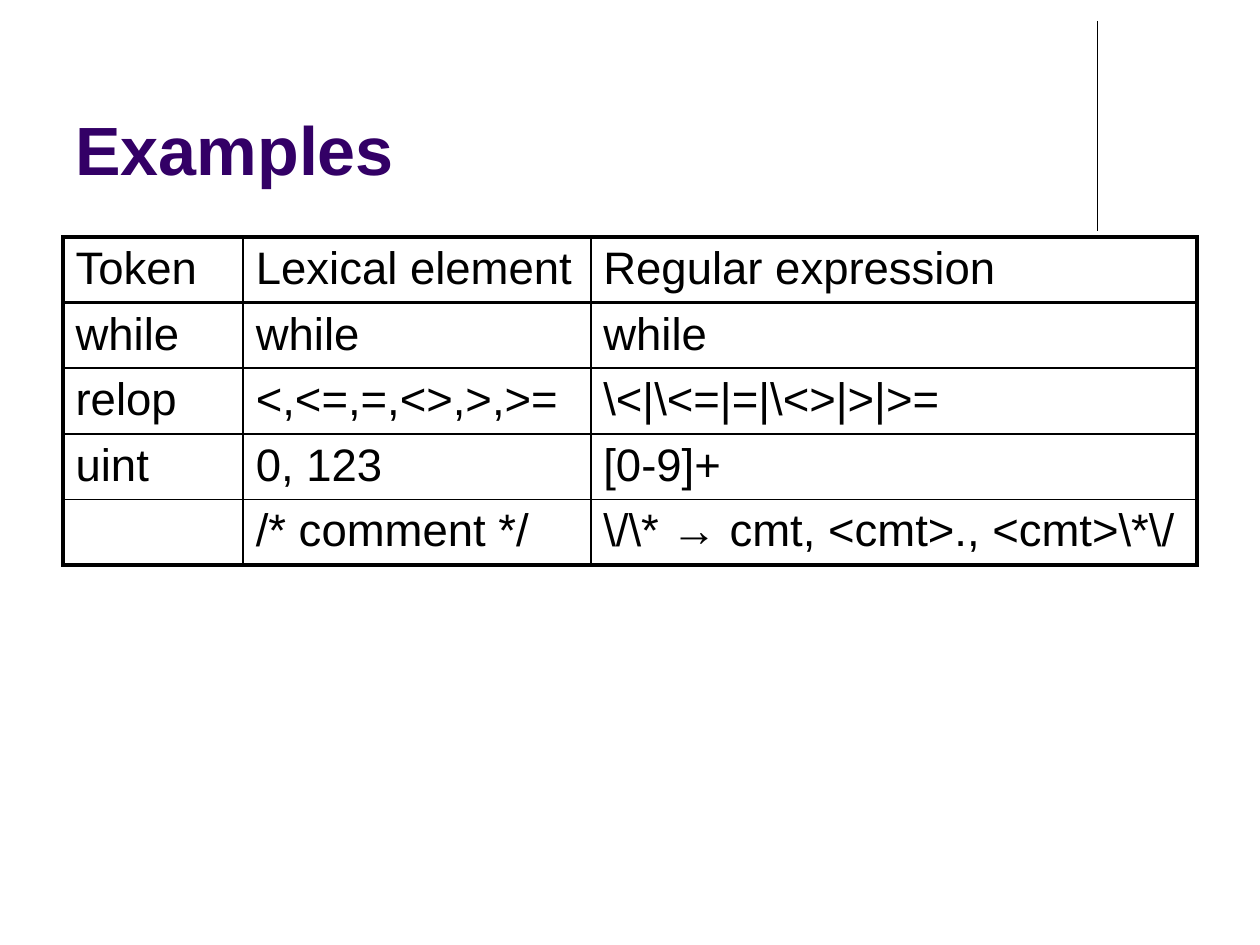
"""Build a slide with a table of token examples and their regular expressions."""
from dataclasses import dataclass

from pptx import Presentation
from pptx import oxml as x
from pptx import util as u
from pptx.dml import color as c
from pptx.enum import shapes as s, text as t
from pptx.oxml import ns


@dataclass(frozen=True)
class Theme:
    font: str = "Arial"
    ink: str = "000000"
    accent: str = "330066"
    title_size: float = 39
    body_size: float = 26
    thin: float = 1
    thick: float = 2.25
    rule: float = 0.75


class SlideBuilder:
    def __init__(self, deck, theme):
        self.theme = theme
        self.page = deck.slides.add_slide(deck.slide_layouts[6])

    def style(self, font, size, color, bold=False):
        font.name, font.size, font.bold = self.theme.font, u.Pt(size), bold
        font.color.rgb = c.RGBColor.from_string(color)

    def add_words(self, para, words, size, color, bold=False):
        self.style(para.font, size, color, bold)
        if words:
            span = para.add_run()
            span.text = words
            self.style(span.font, size, color, bold)

    def rule(self, left, top, bottom):
        line = self.page.shapes.add_connector(
            s.MSO_CONNECTOR.STRAIGHT, *map(u.Pt, (left, top, left, bottom)))
        line.line.width = u.Pt(self.theme.rule)
        line.line.color.rgb = c.RGBColor.from_string(self.theme.ink)
        line._element.spPr.append(x.parse_xml(f"<a:effectLst {ns.nsdecls('a')}/>"))

    def title(self, words, left, top, width, height):
        box = self.page.shapes.add_textbox(*map(u.Pt, (left, top, width, height)))
        frame = box.text_frame
        frame.word_wrap = True
        frame.vertical_anchor = t.MSO_ANCHOR.BOTTOM
        self.add_words(frame.paragraphs[0], words, self.theme.title_size,
                       self.theme.accent, True)

    def border(self, cell, side, width):
        cell._tc.get_or_add_tcPr().append(x.parse_xml(
            f'<a:ln{side} {ns.nsdecls("a")} w="{u.Pt(width)}"><a:solidFill>'
            f'<a:srgbClr val="{self.theme.ink}"/></a:solidFill></a:ln{side}>'))

    def table(self, rows, left, top, widths, row_height):
        frame = self.page.shapes.add_table(
            len(rows), len(widths), u.Pt(left), u.Pt(top),
            u.Pt(sum(widths)), u.Pt(row_height * len(rows)))
        grid = frame.table
        grid.first_row = grid.horz_banding = False
        for column, width in zip(grid.columns, widths):
            column.width = u.Pt(width)
        last_row, last_column = len(rows) - 1, len(widths) - 1
        for i, row in enumerate(rows):
            for j, words in enumerate(row):
                cell = grid.cell(i, j)
                cell.margin_top, cell.margin_bottom = u.Pt(3.6), u.Pt(2.7)
                heavy = {"L": j == 0, "R": j == last_column,
                         "T": i <= 1, "B": i in (0, last_row)}
                for side, is_heavy in heavy.items():
                    self.border(cell, side, self.theme.thick if is_heavy else self.theme.thin)
                cell.fill.background()
                self.add_words(cell.text_frame.paragraphs[0], words,
                               self.theme.body_size, self.theme.ink)


def main():
    deck = Presentation()
    deck.slide_width, deck.slide_height = u.Pt(720), u.Pt(540)
    builder = SlideBuilder(deck, Theme())
    builder.rule(627, 12, 132)
    builder.title("Examples", 36, 9.4, 594, 102)
    builder.table([
        ("Token", "Lexical element", "Regular expression"),
        ("while", "while", "while"),
        ("relop", "<,<=,=,<>,>,>=", r"\<|\<=|=|\<>|>|>="),
        ("uint", "0, 123", "[0-9]+"),
        ("", "/* comment */", r"\/\* → cmt, <cmt>., <cmt>\*\/"),
    ], 36, 135.4, (103, 198.6, 346.4), 36.2)
    deck.save("out.pptx")


if __name__ == "__main__":
    main()
